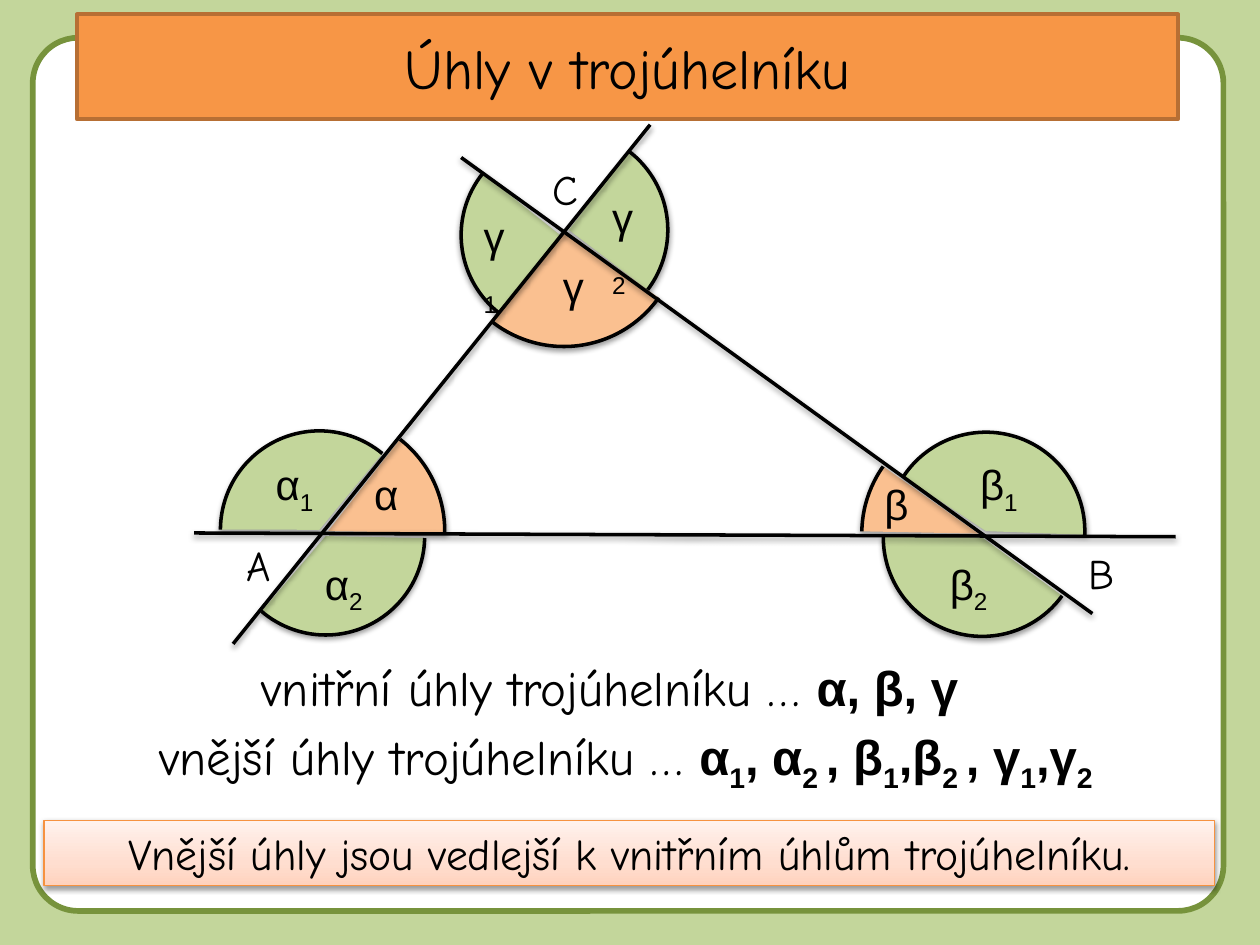
from copy import deepcopy
from itertools import cycle

from lxml.etree import SubElement
from pptx import Presentation
from pptx.dml.color import RGBColor
from pptx.enum.shapes import MSO_CONNECTOR, MSO_SHAPE
from pptx.enum.text import MSO_ANCHOR, MSO_AUTO_SIZE, PP_ALIGN
from pptx.oxml.ns import qn
from pptx.util import Inches, Pt

COLORS = {
    "background": "C3D69B", "panel": "FFFFFF", "panel_edge": "77933C",
    "title": "F79646", "title_edge": "B76F34", "ink": "000000",
    "inner": "FAC090", "outer": "C3D69B", "rule_edge": "F69240",
}
RULE_GRADIENT = [(0, "FFD2BD"), (0.35, "FFDED0"), (1, "FFF2ED")]
HAND, GREEK = "Comic Neue", "Arial"
COLUMNS, ROWS = 100, 75
DIAMETER = {"inner": 18.5, "outer": 15.7}


def rgb(name):
    return RGBColor.from_string(COLORS[name])


class TriangleSlide:
    """Places elements on a grid of 100 columns and 75 rows."""

    def __init__(self, deck):
        self.column = deck.slide_width / COLUMNS
        self.row = deck.slide_height / ROWS
        self.slide = deck.slides.add_slide(deck.slide_layouts[5])
        self.shapes = self.slide.shapes
        self.slide.background.fill.solid()
        self.slide.background.fill.fore_color.rgb = rgb("background")

    def place(self, left, top, width, height):
        return (round(left * self.column), round(top * self.row),
                round(width * self.column), round(height * self.row))

    def paint(self, shape, fill=None, edge=None, weight=2):
        if fill:
            shape.fill.solid()
            shape.fill.fore_color.rgb = rgb(fill)
        if edge:
            shape.line.color.rgb = rgb(edge)
            shape.line.width = Pt(weight)
        else:
            shape.line.fill.background()

    def effect(self, shape, shadow=True):
        """Soft shadow straight below, or none at all."""
        effects = SubElement(shape.element.spPr, qn("a:effectLst"))
        if shadow:
            outer = SubElement(effects, qn("a:outerShdw"), blurRad="40000",
                               dist="20000", dir="5400000", rotWithShape="0")
            black = SubElement(outer, qn("a:srgbClr"), val=COLORS["ink"])
            SubElement(black, qn("a:alpha"), val="38000")

    def letter(self, shape, runs, size, font=HAND, lead=None, wrap=True,
               align=PP_ALIGN.LEFT, anchor=MSO_ANCHOR.TOP):
        """Runs alternate between the base line and subscript, after the lead."""
        frame_format = {"word_wrap": wrap, "vertical_anchor": anchor,
                        "auto_size": MSO_AUTO_SIZE.SHAPE_TO_FIT_TEXT}
        for name, value in frame_format.items():
            setattr(shape.text_frame, name, value)
        paragraph = shape.text_frame.paragraphs[0]
        paragraph.alignment = align
        pieces = [(lead, HAND, False, False)] if lead else []
        pieces += [(text, font, bool(lead), subscript)
                   for text, subscript in zip(runs, cycle((False, True)))]
        for text, face, bold, subscript in pieces:
            run = paragraph.add_run()
            run.text = text
            for name, value in {"name": face, "size": Pt(size), "bold": bold}.items():
                setattr(run.font, name, value)
            run.font.color.rgb = rgb("ink")
            if subscript:
                run.font._element.set("baseline", "-25000")

    def title(self, text, at):
        heading = self.shapes.title
        heading.left, heading.top, heading.width, heading.height = self.place(*at)
        self.paint(heading, "title", "title_edge")
        self.letter(heading, [text], 32, align=PP_ALIGN.CENTER, anchor=MSO_ANCHOR.MIDDLE)

    def panel(self, at):
        panel = self.shapes.add_shape(MSO_SHAPE.ROUNDED_RECTANGLE, *self.place(*at))
        panel.adjustments[0] = 0.052
        self.paint(panel, "panel", "panel_edge", 3.25)
        self.effect(panel, shadow=False)
        self.shapes.title.element.addprevious(panel.element)

    def label(self, runs, at, font=HAND, wrap=True, parent=None):
        box = (parent or self.shapes).add_textbox(*self.place(*at))
        self.letter(box, runs, 24, font, wrap=wrap)

    def angle(self, kind, corner, turn, arc, runs, label_at):
        parts = self.shapes.add_group_shape().shapes
        size = DIAMETER[kind]
        sector = parts.add_shape(MSO_SHAPE.ARC, *self.place(*corner, size, size))
        sector.rotation = turn
        for index, value in enumerate(arc):
            sector.adjustments[index] = value
        self.paint(sector, kind, "ink")
        self.effect(sector)
        self.label(runs, (*label_at[:2], label_at[2], 5), GREEK, False, parts)

    def statement(self, lead, runs, at):
        box = self.shapes.add_shape(MSO_SHAPE.RECTANGLE, *self.place(*at))
        self.paint(box, "panel")
        self.effect(box, shadow=False)
        self.letter(box, runs, 28, GREEK, lead, align=PP_ALIGN.CENTER)

    def side(self, start, end):
        points = [round(value * unit) for value, unit in
                  zip((*start, *end), cycle((self.column, self.row)))]
        line = self.shapes.add_connector(MSO_CONNECTOR.STRAIGHT, *points)
        line.line.color.rgb = rgb("ink")
        line.line.width = Pt(2)
        self.effect(line)

    def rule(self, text, at):
        box = self.shapes.add_shape(MSO_SHAPE.RECTANGLE, *self.place(*at))
        box.fill.gradient()
        box.fill.gradient_angle = 90
        stops = box.element.spPr.find(".//" + qn("a:gsLst"))
        stops.append(deepcopy(stops[0]))
        for stop, (position, color) in zip(box.fill.gradient_stops, RULE_GRADIENT):
            stop.position = position
            stop.color.rgb = RGBColor.from_string(color)
        self.paint(box, edge="rule_edge", weight=0.75)
        self.effect(box)
        self.letter(box, [text], 25, align=PP_ALIGN.CENTER)


# Kind, corner, rotation, arc adjustments, label, label place and width
ANGLES = [
    ("inner", (16.8, 32.9), 23.8, (170.55, 202.35), "α", (28.7, 36.7, 4.1)),
    ("inner", (68.4, 33.1), 251.7, (173.65, 194.09), "β", (69.2, 37.5, 3.9)),
    ("inner", (35.5, 9), 134.9, (156.4, 211.57), "γ", (43.7, 20.2, 3.4)),
    ("outer", (17.5, 34.2), 299.2, (144.56, 6.21), "α1", (20.9, 35.9, 5.3)),
    ("outer", (18, 34.7), 120.2, (144.56, 6.21), "α2", (24.8, 43.8, 5.3)),
    ("outer", (36.6, 10.8), 225.9, (157.6, 211.57), "γ1", (37.4, 16.2, 4.5)),
    ("outer", (70.4, 34.3), 332.5, (144.56, 17.79), "β1", (76.8, 35.9, 5)),
    ("outer", (37.3, 10.4), 44.6, (157.6, 211.57), "γ2", (47.6, 14.7, 4.5)),
    ("outer", (70.1, 34.8), 151.3, (146.93, 17.79), "β2", (74.4, 43.8, 5)),
]
VERTICES = {"A": (18.6, 42.3, 5, 5.2), "C": (42.9, 12.5, 4.1, 5), "B": (85.4, 43, 4.7, 5)}
SIDES = [((18.5, 51.1), (51.6, 9.9)), ((86.7, 48.7), (36.6, 12.5)),
         ((15.4, 42.3), (93.3, 42.6))]
OUTER_NAMES = ["α", "1", ", α", "2 ", ", β", "1", ",β", "2 ", ", γ", "1", ",γ", "2 "]


def main():
    deck = Presentation()
    deck.slide_width, deck.slide_height = Inches(10), Inches(7.5)
    page = TriangleSlide(deck)

    # Frame and title
    page.panel((2.6, 3, 94.5, 69.3))
    page.title("Úhly v trojúhelníku", (6.1, 2.1, 87.4, 6.4))

    # Triangle with its inner and outer angles
    for vertex, at in VERTICES.items():
        page.label([vertex], at)
    page.statement("vnitřní úhly trojúhelníku … ", ["α, β, γ"], (9.8, 51.7, 77.2, 5.7))
    for angle in ANGLES:
        page.angle(*angle)
    page.statement("vnější úhly trojúhelníku … ", OUTER_NAMES, (7.5, 57.2, 85, 5.7))
    for start, end in SIDES:
        page.side(start, end)

    # Rule
    page.rule("Vnější úhly jsou vedlejší k vnitřním úhlům trojúhelníku.",
              (3.5, 65.1, 92.9, 5.2))
    deck.save("out.pptx")


if __name__ == "__main__":
    main()
